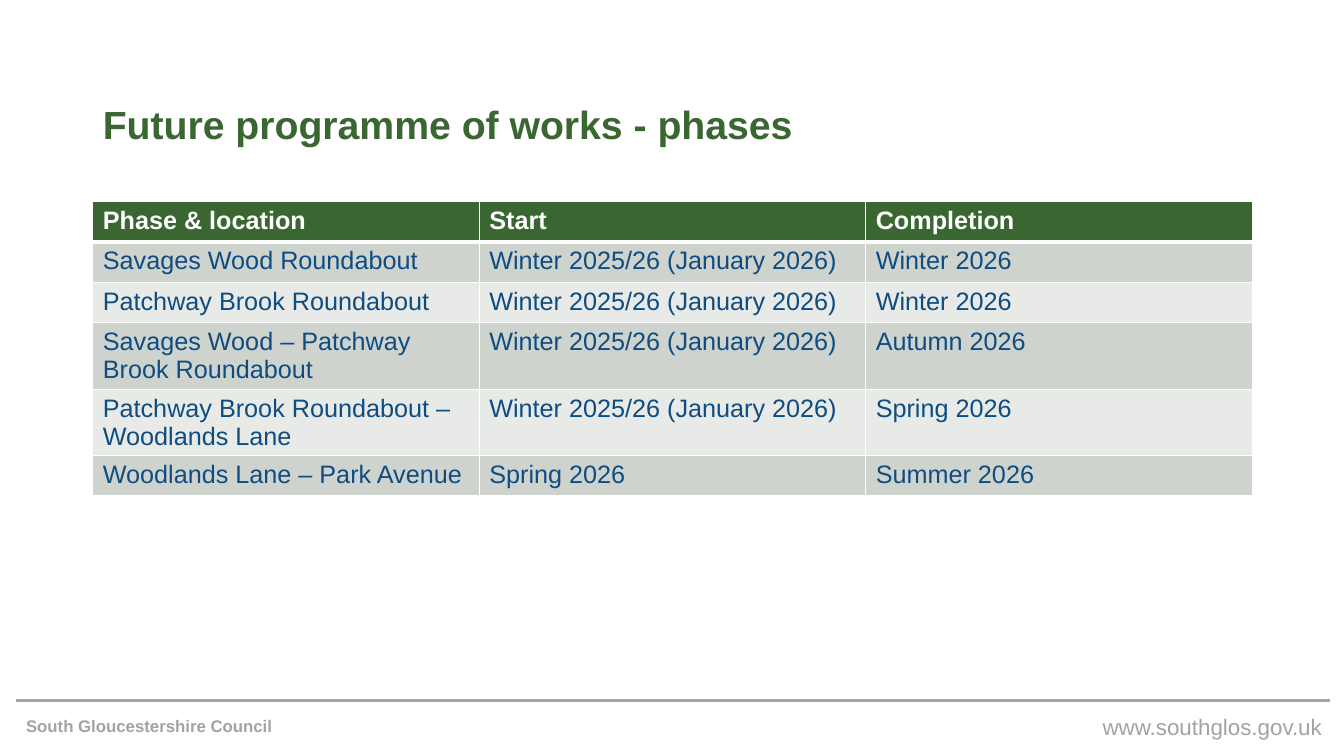
from dataclasses import dataclass

from lxml import etree
from pptx import Presentation
from pptx.dml.color import RGBColor
from pptx.enum.shapes import MSO_CONNECTOR
from pptx.enum.text import MSO_ANCHOR, MSO_AUTO_SIZE, PP_ALIGN
from pptx.oxml.ns import qn
from pptx.util import Pt

PX = 9144  # EMU per px, 100 px to the inch
FONT = "Arial"
LEFT, RIGHT = PP_ALIGN.LEFT, PP_ALIGN.RIGHT
TOP, MIDDLE = MSO_ANCHOR.TOP, MSO_ANCHOR.MIDDLE
STRAIGHT = MSO_CONNECTOR.STRAIGHT
NO_FIT = MSO_AUTO_SIZE.NONE

COLORS = {
    "green": "396631",
    "blue": "0F4C81",
    "grey": "A3A3A3",
    "white": "FFFFFF",
    "dark band": "CED3CE",
    "light band": "E8EAE8",
}


@dataclass
class Label:
    text: str
    box: tuple[int, int, int, int]
    size: int
    bold: bool
    align: PP_ALIGN
    anchor: MSO_ANCHOR


@dataclass
class Phase:
    place: str
    start: str
    end: str


JANUARY = "Winter 2025/26 (January 2026)"
HEAD = Phase("Phase & location", "Start", "Completion")
PHASES = [
    Phase("Savages Wood Roundabout", JANUARY, "Winter 2026"),
    Phase("Patchway Brook Roundabout", JANUARY, "Winter 2026"),
    Phase("Savages Wood – Patchway Brook Roundabout", JANUARY, "Autumn 2026"),
    Phase("Patchway Brook Roundabout – Woodlands Lane", JANUARY, "Spring 2026"),
    Phase("Woodlands Lane – Park Avenue", "Spring 2026", "Summer 2026"),
]
FOOTERS = [
    Label("www.southglos.gov.uk", (1002, 703, 319, 37), 16, False, RIGHT, TOP),
    Label("South Gloucestershire Council", (16, 703, 450, 34), 12, True, LEFT, MIDDLE),
]


def color(name: str) -> RGBColor:
    return RGBColor.from_string(COLORS[name])


def place(shape, box: tuple[int, int, int, int]) -> None:
    shape.left, shape.top, shape.width, shape.height = (n * PX for n in box)


def write(para, text: str, size: int, ink: str, bold: bool) -> None:
    run = para.add_run()
    run.text = text
    run.font.name = FONT
    run.font.size = Pt(size)
    run.font.bold = bold
    run.font.color.rgb = color(ink)


def add_title(slide, text: str) -> None:
    title = slide.shapes.title
    place(title, (92, 53, 1004, 145))
    frame = title.text_frame
    frame.auto_size = NO_FIT
    frame.word_wrap = True
    frame.vertical_anchor = MIDDLE
    para = frame.paragraphs[0]
    para.alignment = LEFT
    para.line_spacing = 0.9
    write(para, text, 28, "green", True)


def add_label(slide, label: Label) -> None:
    box = slide.shapes.add_textbox(*(n * PX for n in label.box))
    frame = box.text_frame
    frame.word_wrap = True
    frame.vertical_anchor = label.anchor
    para = frame.paragraphs[0]
    para.alignment = label.align
    write(para, label.text, label.size, "grey", label.bold)


def add_rule(slide) -> None:
    rule = slide.shapes.add_connector(
        STRAIGHT, 16 * PX, 695 * PX, 1319 * PX, 695 * PX)
    rule.line.color.rgb = color("grey")
    rule.line.width = 0
    props = rule._element.spPr
    etree.SubElement(props, qn("a:effectLst"))


def add_edge(cell, side: str, width: int) -> None:
    props = cell._tc.get_or_add_tcPr()
    edge = etree.SubElement(props, qn(f"a:ln{side}"), w=str(Pt(width)))
    fill = etree.SubElement(edge, qn("a:solidFill"))
    etree.SubElement(fill, qn("a:srgbClr"), val=COLORS["white"])


def add_table(slide) -> None:
    rows = [HEAD, *PHASES]
    frame = slide.shapes.add_table(
        len(rows), 3, 92 * PX, 200 * PX, 1150 * PX, len(rows) * 40 * PX)
    table = frame.table
    for r, phase in enumerate(rows):
        head = r == 0
        band = "green" if head else "dark band" if r % 2 else "light band"
        for c, text in enumerate((phase.place, phase.start, phase.end)):
            cell = table.cell(r, c)
            # Edges come before the fill; the one under the head is thick
            for side in "LRTB":
                thick = (r, side) in ((0, "B"), (1, "T"))
                add_edge(cell, side, 3 if thick else 1)
            cell.fill.solid()
            cell.fill.fore_color.rgb = color(band)
            ink = "white" if head else "blue"
            write(cell.text_frame.paragraphs[0], text, 18, ink, head)


def main() -> None:
    deck = Presentation()
    deck.slide_width, deck.slide_height = 1333 * PX, 750 * PX
    slide = deck.slides.add_slide(deck.slide_layouts[5])

    # Title and programme
    add_title(slide, "Future programme of works - phases")
    add_table(slide)

    # Footer
    add_rule(slide)
    for label in FOOTERS:
        add_label(slide, label)

    deck.save("out.pptx")


if __name__ == "__main__":
    main()
